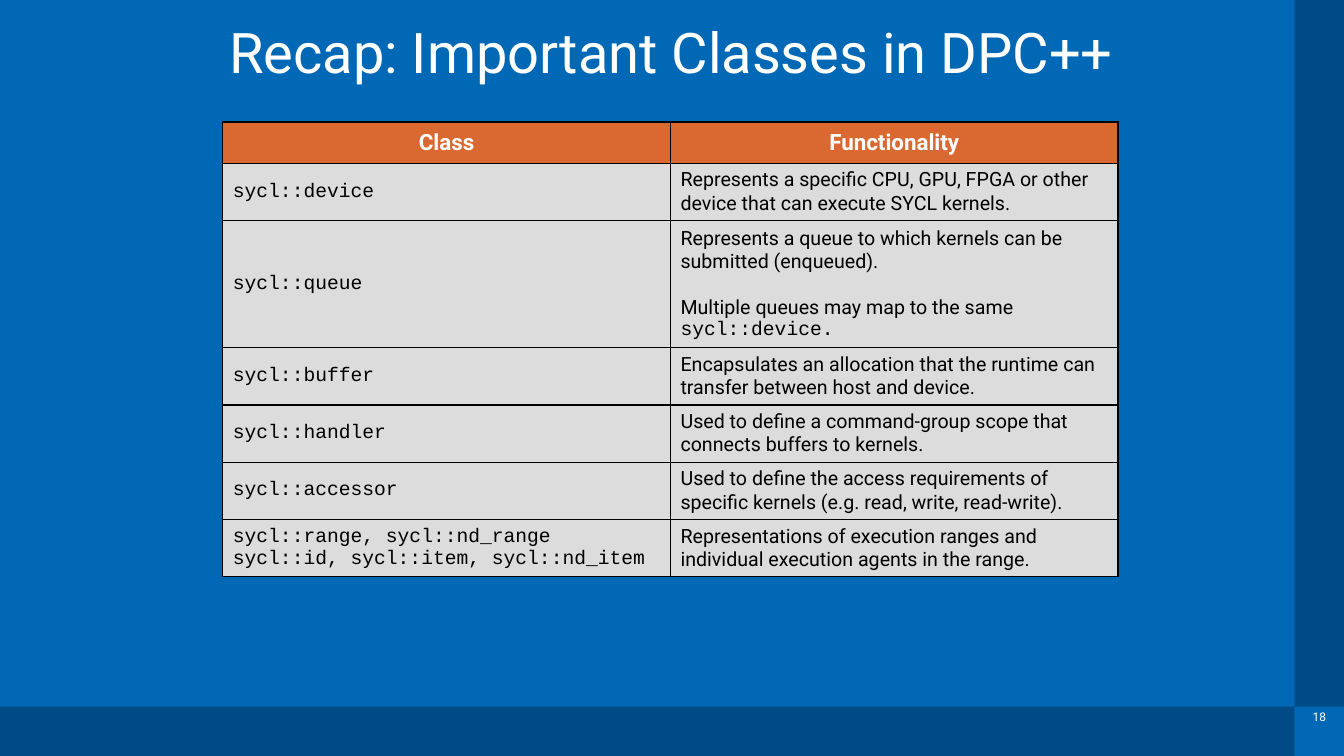
from pptx import Presentation
from pptx.dml.color import RGBColor
from pptx.enum.shapes import MSO_SHAPE as Shape
from pptx.enum.text import MSO_ANCHOR as Anchor, PP_ALIGN as Align
from pptx.oxml import parse_xml
from pptx.oxml.ns import nsdecls
from pptx.util import Inches, Pt

COLORS = {
    "background": "0068B5",
    "band": "004A86",
    "header": "D96930",
    "body": "DCDCDC",
    "light": "FFFFFF",
    "dark": "000000",
}
SANS, MONO = "Roboto", "Courier New"
BLANK_LINE = 16.5


def rgb(name):
    return RGBColor.from_string(COLORS[name])


class SlideBuilder:
    def __init__(self, slide):
        self.slide = slide
        slide.background.fill.solid()
        slide.background.fill.fore_color.rgb = rgb("background")

    def rect(self, left, top, width, height, color):
        block = self.slide.shapes.add_shape(
            Shape.RECTANGLE, Inches(left), Inches(top), Inches(width), Inches(height))
        block.shadow.inherit = False
        block.fill.solid()
        block.fill.fore_color.rgb = rgb(color)
        block.line.fill.background()

    def run(self, paragraph, text, size, font=SANS, color="dark", bold=False):
        run = paragraph.add_run()
        run.text = text
        run.font.size = Pt(size)
        run.font.name = font
        run.font.bold = bold
        run.font.color.rgb = rgb(color)

    def text(self, left, top, width, height, text, size, inset=0,
             align=Align.LEFT, anchor=Anchor.TOP):
        frame = self.slide.shapes.add_textbox(
            Inches(left), Inches(top), Inches(width), Inches(height)).text_frame
        frame.word_wrap = True
        frame.vertical_anchor = anchor
        frame.margin_left = frame.margin_right = Inches(inset)
        frame.margin_top = frame.margin_bottom = Inches(inset)
        paragraph = frame.paragraphs[0]
        paragraph.alignment = align
        paragraph.line_spacing = 0.9
        self.run(paragraph, text, size, color="light")

    def borders(self, cell):
        properties = cell._tc.get_or_add_tcPr()
        for index, side in enumerate(("lnL", "lnR", "lnT", "lnB")):
            properties.insert(index, parse_xml(
                f'<a:{side} {nsdecls("a")} w="{Pt(1)}"><a:solidFill>'
                f'<a:srgbClr val="{COLORS["dark"]}"/></a:solidFill></a:{side}>'))

    def cell(self, cell, paragraphs, header):
        """Each paragraph is a list of (text, font) runs."""
        cell.vertical_anchor = Anchor.MIDDLE
        cell.fill.solid()
        cell.fill.fore_color.rgb = rgb("header" if header else "body")
        self.borders(cell)
        for index, runs in enumerate(paragraphs):
            if index:
                paragraph = cell.text_frame.add_paragraph()
                paragraph.space_before = Pt(BLANK_LINE)
            else:
                paragraph = cell.text_frame.paragraphs[0]
            paragraph.alignment = Align.CENTER if header else Align.LEFT
            for text, font in runs:
                for line_index, line in enumerate(text.split("\n")):
                    if line_index:
                        paragraph.add_line_break()
                    if header:
                        self.run(paragraph, line, 16, font, "light", True)
                    else:
                        self.run(paragraph, line, 14, font)

    def table(self, left, top, column_width, heights, rows):
        columns = len(rows[0])
        table = self.slide.shapes.add_table(
            len(rows), columns, Inches(left), Inches(top),
            Inches(column_width * columns), Inches(sum(heights))).table
        for column in table.columns:
            column.width = Inches(column_width)
        for r, (height, row) in enumerate(zip(heights, rows)):
            table.rows[r].height = Inches(height)
            for c, paragraphs in enumerate(row):
                self.cell(table.cell(r, c), paragraphs, header=r == 0)


def class_row(names, description):
    return [[[(names, MONO)]], [[(description, SANS)]]]


CLASS_ROWS = [
    [[[("Class", SANS)]], [[("Functionality", SANS)]]],
    class_row("sycl::device",
              "Represents a specific CPU, GPU, FPGA or other device that can "
              "execute SYCL kernels."),
    [[[("sycl::queue", MONO)]],
     [[("Represents a queue to which kernels can be submitted (enqueued).", SANS)],
      [("Multiple queues may map to the same ", SANS), ("sycl::device.", MONO)]]],
    class_row("sycl::buffer",
              "Encapsulates an allocation that the runtime can transfer between "
              "host and device."),
    class_row("sycl::handler",
              "Used to define a command-group scope that connects buffers to kernels."),
    class_row("sycl::accessor",
              "Used to define the access requirements of specific kernels "
              "(e.g. read, write, read-write)."),
    class_row("sycl::range, sycl::nd_range\nsycl::id, sycl::item, sycl::nd_item",
              "Representations of execution ranges and individual execution agents "
              "in the range."),
]


def main():
    deck = Presentation()
    deck.slide_width, deck.slide_height = Inches(13.33), Inches(7.5)
    builder = SlideBuilder(deck.slides.add_slide(deck.slide_layouts[6]))

    # Frame along the bottom and right edges
    builder.rect(0, 7.01, 12.84, 0.49, "band")
    builder.rect(12.84, 7.01, 0.49, 0.49, "background")
    builder.rect(12.84, 0, 0.49, 7.01, "band")
    builder.text(12.99, 6.86, 0.23, 0.51, "18", 8.5, inset=0.03, anchor=Anchor.MIDDLE)

    # Title
    builder.text(0.63, 0.25, 12.05, 0.96, "Recap: Important Classes in DPC++", 40,
                 align=Align.CENTER)

    # Class overview
    heights = [0.41, 0.56, 1.24] + [0.56] * 4
    builder.table(2.21, 1.21, 4.44, heights, CLASS_ROWS)

    deck.save("out.pptx")


if __name__ == "__main__":
    main()
